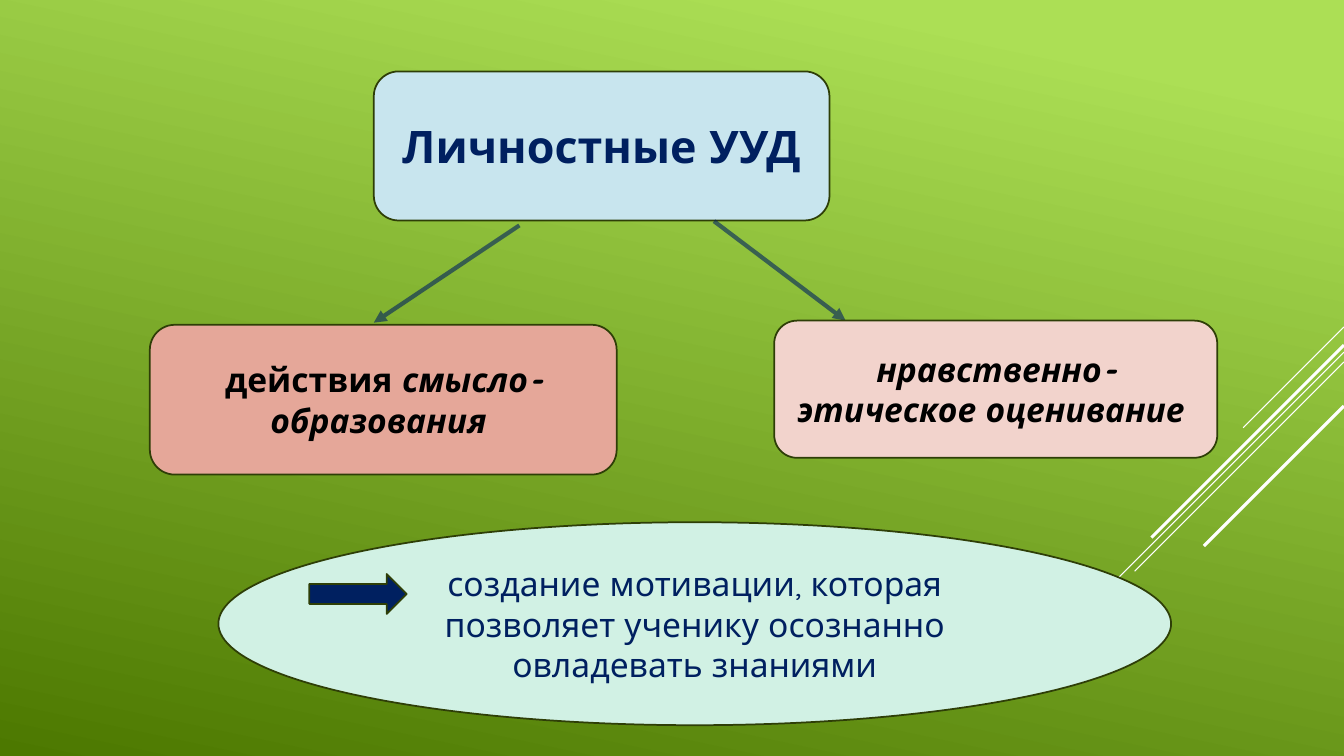
import pptx
import pptx.dml.color
import pptx.enum.shapes
import pptx.enum.text
import pptx.oxml.ns
import pptx.util
from lxml import etree

Pt = pptx.util.Pt
RGB = pptx.dml.color.RGBColor.from_string
MSO = pptx.enum.shapes.MSO_SHAPE
qn = pptx.oxml.ns.qn
FONT = "Quicksand"
COLORS = {
    "light": "ACDF55", "dark": "4C7800", "outline": "2E3E07",
    "navy": "002060", "black": "000000", "white": "FFFFFF",
    "title": "C8E5EE", "meaning": "E5A799", "ethics": "F2D3CC",
    "goal": "D1F1E4",
}


def paint_background(slide):
    fill = slide.background.fill
    fill.gradient()
    fill.gradient_angle = 258
    stops = ((0.1, "light"), (1, "dark"))
    for stop, (position, color) in zip(fill.gradient_stops, stops):
        stop.position = position
        stop.color.rgb = RGB(COLORS[color])


def add_line(slide, x1, y1, x2, y2, color, width):
    line = slide.shapes.add_connector(
        pptx.enum.shapes.MSO_CONNECTOR.STRAIGHT, Pt(x1), Pt(y1), Pt(x2), Pt(y2))
    line.line.color.rgb = RGB(COLORS[color])
    line.line.width = Pt(width)
    etree.SubElement(line._element.spPr, qn("a:effectLst"))
    return line


def add_arrow(slide, x1, y1, x2, y2):
    ln = add_line(slide, x1, y1, x2, y2, "navy", 3).line._get_or_add_ln()
    etree.SubElement(ln.find(".//" + qn("a:srgbClr")), qn("a:alpha"), val="60000")
    etree.SubElement(ln, qn("a:tailEnd"), type="triangle")


def add_figure(slide, kind, box, fill):
    sp = slide.shapes.add_shape(kind, *map(Pt, box))
    sp.shadow.inherit = False
    sp.fill.solid()
    sp.fill.fore_color.rgb = RGB(COLORS[fill])
    sp.line.color.rgb = RGB(COLORS["outline"])
    sp.line.width = Pt(1.25)
    return sp


def add_label(slide, kind, box, fill, paragraphs, size, color, bold=True):
    tf = add_figure(slide, kind, box, fill).text_frame
    tf.word_wrap = True
    tf.vertical_anchor = pptx.enum.text.MSO_ANCHOR.MIDDLE
    for i, runs in enumerate(paragraphs):
        p = tf.add_paragraph() if i else tf.paragraphs[0]
        p.alignment = pptx.enum.text.PP_ALIGN.CENTER
        for text, italic in runs:
            r = p.add_run()
            r.text = text
            r.font.name = FONT
            r.font.size = Pt(size)
            r.font.bold = bold
            r.font.italic = italic
            r.font.color.rgb = RGB(COLORS[color])


def draw_rays(slide, right):
    rays = ((233.5, 72, 0.75), (251.5, 234.5, 0.75), (258.5, 149.5, 0.75),
            (246.5, 137.5, 2.25), (290, 100, 2.25))
    for top, run, width in rays:
        add_line(slide, right, top, right - run, top + run, "white", width)


def draw_scheme(slide, left, top):
    add_label(slide, MSO.ROUNDED_RECTANGLE, (left + 160, top, 325.5, 106.5),
              "title", [[("Личностные УУД", False)]], 32, "navy")
    add_arrow(slide, left + 264, top + 110, left + 160, top + 179.5)
    add_arrow(slide, left + 403, top + 107, left + 497, top + 178)
    add_label(slide, MSO.ROUNDED_RECTANGLE, (left, top + 181, 333.5, 107),
              "meaning", [[("действия\u00a0", False), ("смысло-", True)],
                          [("образования\u00a0", True)]], 24, "black")
    add_label(slide, MSO.ROUNDED_RECTANGLE, (left + 446, top + 178, 316.5, 98),
              "ethics", [[("нравственно-этическое оценивание\u00a0", True)]],
              24, "black")


def draw_goal(slide, left, top, width, height):
    text = "создание мотивации, которая позволяет ученику осознанно овладевать знаниями"
    add_label(slide, MSO.OVAL, (left, top, width, height), "goal",
              [[(text, False)]], 24, "navy", bold=False)
    add_figure(slide, MSO.RIGHT_ARROW, (left + 65, top + 37, 69.5, 28.5), "navy")


def main():
    prs = pptx.Presentation()
    prs.slide_width, prs.slide_height = Pt(960), Pt(540)
    slide = prs.slides.add_slide(prs.slide_layouts[6])
    paint_background(slide)
    draw_rays(slide, 960)
    draw_scheme(slide, 107, 51)
    draw_goal(slide, 156, 373, 680.5, 145)
    prs.save("out.pptx")


if __name__ == "__main__":
    main()
